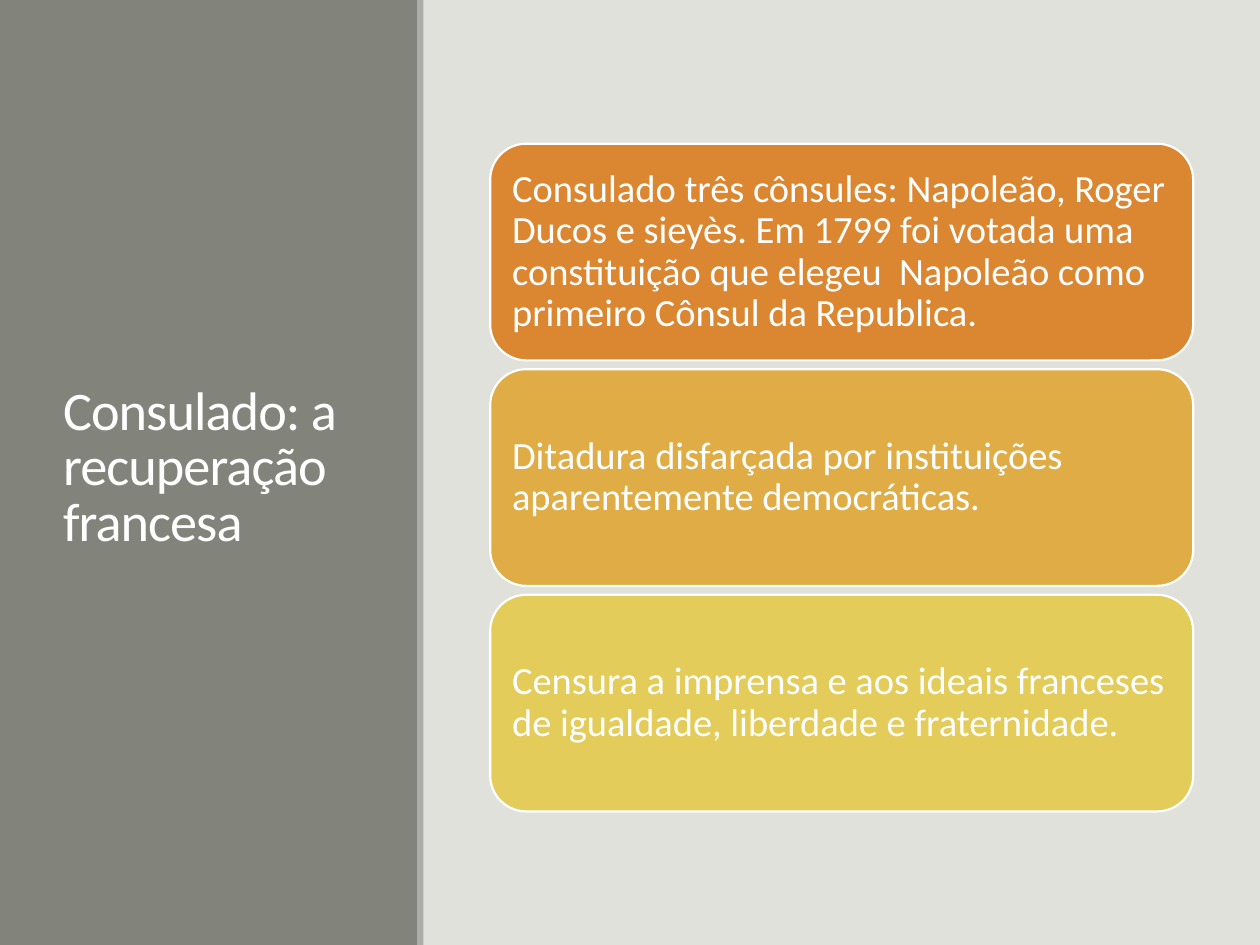
from pptx import Presentation
from pptx.dml.color import RGBColor
from pptx.enum import shapes, text
from pptx.util import Inches, Pt

COLORS = {
    "background": "E1E1DB",
    "panel": "82847C",
    "edge": "ACADA8",
    "white": "FFFFFF",
    "orange": "DB8631",
    "amber": "DFAC45",
    "yellow": "E3CC5A",
}

CARDS = [
    ("orange", "Consulado três cônsules: Napoleão, Roger Ducos e sieyès. "
               "Em 1799 foi votada uma constituição que elegeu  Napoleão "
               "como primeiro Cônsul da Republica."),
    ("amber", "Ditadura disfarçada por instituições aparentemente democráticas."),
    ("yellow", "Censura a imprensa e aos ideais franceses de igualdade, "
               "liberdade e fraternidade."),
]
CARD_LEFT, CARD_TOP, CARD_WIDTH, CARD_HEIGHT = 3.89, 1.14, 5.58, 1.72
CARD_PITCH = 1.79


class SlideBuilder:
    font = "Calibri"

    def __init__(self, slide):
        self.slide = slide
        fill = slide.background.fill
        fill.solid()
        fill.fore_color.rgb = self.color("background")

    def color(self, name):
        return RGBColor.from_string(COLORS[name])

    def shape(self, kind, box, fill):
        sp = self.slide.shapes.add_shape(kind, *map(Inches, box))
        sp.shadow.inherit = False
        sp.fill.solid()
        sp.fill.fore_color.rgb = self.color(fill)
        sp.line.fill.background()
        return sp

    def band(self, box, fill):
        return self.shape(shapes.MSO_SHAPE.RECTANGLE, box, fill)

    def add_words(self, sp, words, size, line_spacing):
        """Fill a shape with one left-aligned, vertically centred paragraph."""
        tf = sp.text_frame
        tf.word_wrap = True
        tf.auto_size = text.MSO_AUTO_SIZE.NONE
        tf.vertical_anchor = text.MSO_ANCHOR.MIDDLE
        p = tf.paragraphs[0]
        p.alignment = text.PP_ALIGN.LEFT
        p.line_spacing = line_spacing
        r = p.add_run()
        r.text = words
        r.font.name = self.font
        r.font.size = Pt(size)
        r.font.color.rgb = self.color("white")
        return r

    def title(self, words, box):
        sp = self.slide.shapes.title
        sp.left, sp.top, sp.width, sp.height = map(Inches, box)
        r = self.add_words(sp, words, 31, 0.85)
        r._r.get_or_add_rPr().set("spc", "-50")
        # Bring the title in front of the side panel.
        self.slide.shapes._spTree.append(sp._element)

    def card(self, words, box, fill):
        sp = self.shape(shapes.MSO_SHAPE.ROUNDED_RECTANGLE, box, fill)
        sp.line.color.rgb = self.color("white")
        sp.line.width = Pt(1.25)
        tf = sp.text_frame
        tf.margin_left = tf.margin_right = Inches(0.09)
        tf.margin_top = tf.margin_bottom = Inches(0.09)
        self.add_words(sp, words, 22, 0.9)


def main():
    prs = Presentation()
    prs.slide_width, prs.slide_height = Inches(10), Inches(7.5)
    s = SlideBuilder(prs.slides.add_slide(prs.slide_layouts[5]))

    s.band((0, 0, 3.32, 7.5), "panel")
    s.band((3.31, 0, 0.05, 7.5), "edge")
    s.title("Consulado: a recuperação francesa", (0.4, 0.57, 2.53, 6.31))

    for i, (fill, words) in enumerate(CARDS):
        top = CARD_TOP + i * CARD_PITCH
        s.card(words, (CARD_LEFT, top, CARD_WIDTH, CARD_HEIGHT), fill)

    prs.save("out.pptx")


if __name__ == "__main__":
    main()
